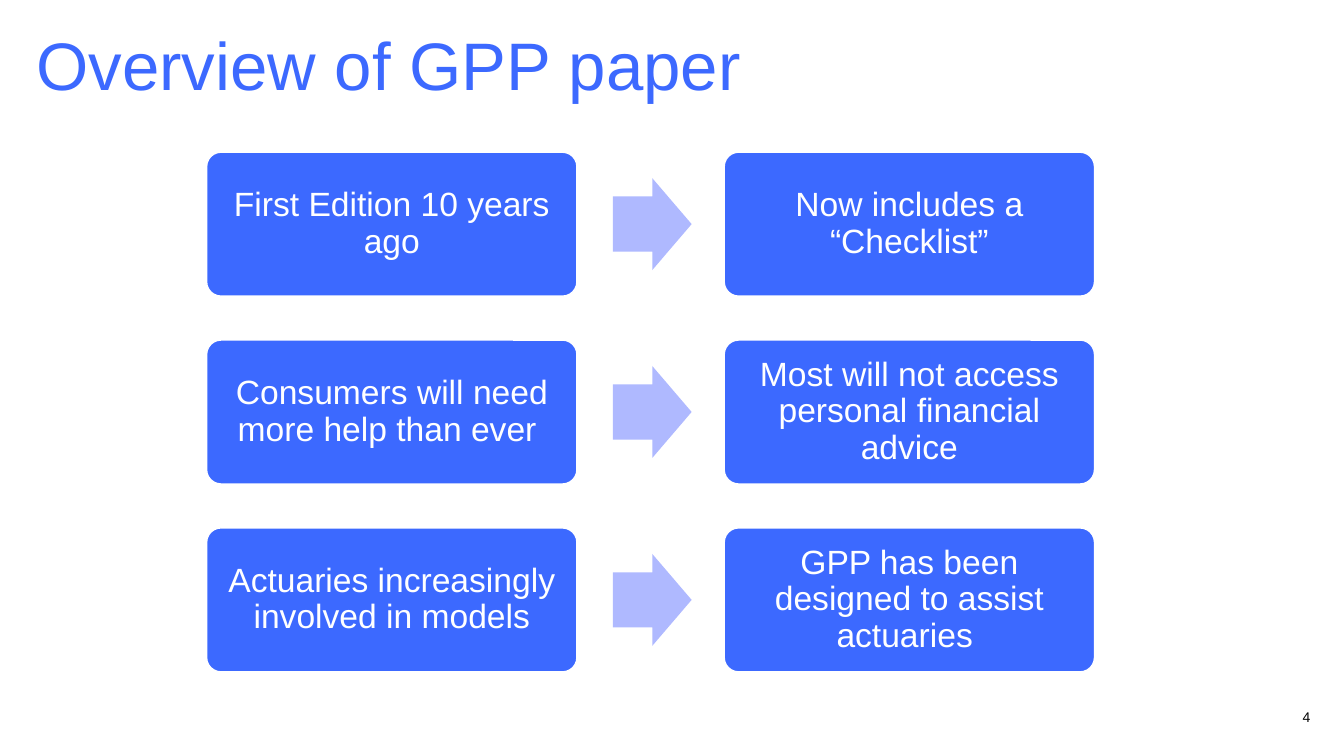
from dataclasses import dataclass

from pptx import Presentation
from pptx.dml.color import RGBColor
from pptx.enum import shapes, text
from pptx.util import Pt

TITLE = "Overview of GPP paper"
PAGE = "4"
ROWS = [
    ("First Edition 10 years ago", "Now includes a “Checklist”"),
    ("Consumers will need more help than ever ",
     "Most will not access personal financial advice"),
    ("Actuaries increasingly involved in models",
     "GPP has been designed to assist actuaries "),
]


@dataclass(frozen=True)
class Theme:
    font: str = "Arial"
    blue: str = "3C69FF"
    lilac: str = "AFB9FF"
    white: str = "FFFFFF"
    black: str = "000000"
    title_size: float = 48
    box_size: float = 24
    page_size: float = 10


THEME = Theme()
SLIDE_W, SLIDE_H = 960, 540
LEFT, TOP, ROW_STEP = 147.6, 108.7, 134.2
BOX_W, BOX_H = 264.5, 102.8
COLUMN_STEP = 369.7
ARROW_W, ARROW_H = 56.2, 65.7
ARROW_SHIFT = 290.2


def write(sp, value, *, size, color, align=text.PP_ALIGN.LEFT,
          anchor=text.MSO_ANCHOR.TOP, inset=0, spacing=1.0):
    tf = sp.text_frame
    tf.word_wrap = True
    tf.auto_size = text.MSO_AUTO_SIZE.NONE
    tf.vertical_anchor = anchor
    tf.margin_left = tf.margin_right = Pt(inset)
    tf.margin_top = tf.margin_bottom = Pt(inset)
    p = tf.paragraphs[0]
    p.alignment = align
    p.line_spacing = spacing
    r = p.add_run()
    r.text = value
    r.font.name = THEME.font
    r.font.size = Pt(size)
    r.font.color.rgb = RGBColor.from_string(color)


def add_shape(s, kind, x, y, w, h, fill, adjustments):
    sp = s.shapes.add_shape(kind, Pt(x), Pt(y), Pt(w), Pt(h))
    sp.shadow.inherit = False
    sp.fill.solid()
    sp.fill.fore_color.rgb = RGBColor.from_string(fill)
    sp.line.fill.background()
    for i, value in enumerate(adjustments):
        sp.adjustments[i] = value
    return sp


def add_box(s, x, y, value):
    sp = add_shape(s, shapes.MSO_SHAPE.ROUNDED_RECTANGLE, x, y,
                   BOX_W, BOX_H, THEME.blue, [0.1])
    sp.line.color.rgb = RGBColor.from_string(THEME.white)
    sp.line.width = Pt(1)
    write(sp, value, size=THEME.box_size, color=THEME.white,
          align=text.PP_ALIGN.CENTER, anchor=text.MSO_ANCHOR.MIDDLE,
          inset=7.2, spacing=0.9)


def main():
    prs = Presentation()
    prs.slide_width, prs.slide_height = Pt(SLIDE_W), Pt(SLIDE_H)
    s = prs.slides.add_slide(prs.slide_layouts[5])

    title = s.shapes.title
    title.left, title.top = Pt(26), Pt(23)
    title.width, title.height = Pt(525.6), Pt(97.2)
    write(title, TITLE, size=THEME.title_size, color=THEME.blue, spacing=0.9)

    for i, row in enumerate(ROWS):
        y = TOP + i * ROW_STEP
        for j, value in enumerate(row):
            add_box(s, LEFT + j * COLUMN_STEP, y, value)
        add_shape(s, shapes.MSO_SHAPE.RIGHT_ARROW, LEFT + ARROW_SHIFT,
                  y + (BOX_H - ARROW_H) / 2, ARROW_W, ARROW_H,
                  THEME.lilac, [0.6, 0.5])

    page = s.shapes.add_textbox(Pt(903), Pt(504), Pt(33), Pt(14.4))
    write(page, PAGE, size=THEME.page_size, color=THEME.black,
          align=text.PP_ALIGN.RIGHT, anchor=text.MSO_ANCHOR.BOTTOM)

    prs.save("out.pptx")


if __name__ == "__main__":
    main()
